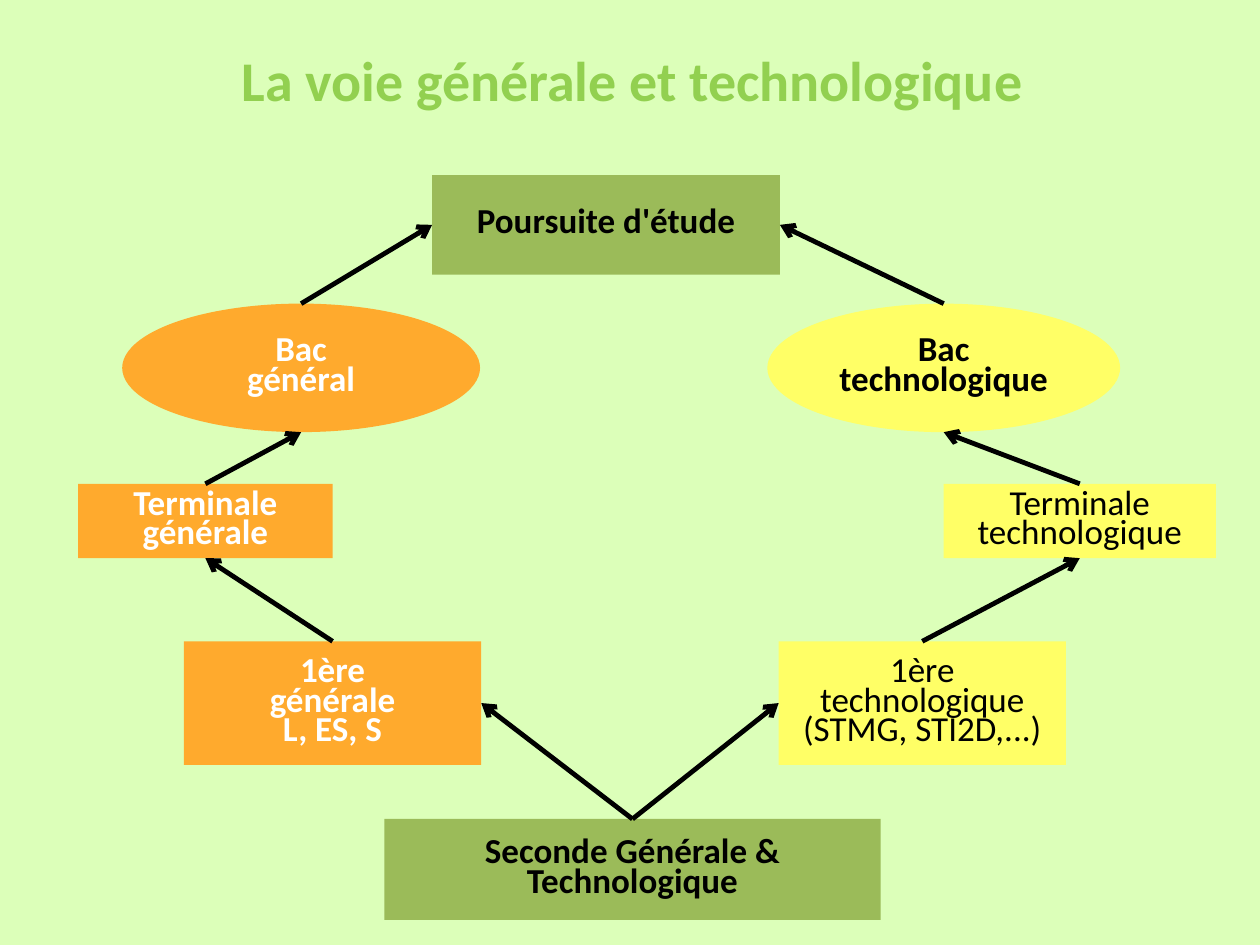
from dataclasses import dataclass

from lxml.etree import SubElement
from pptx import Presentation
from pptx.dml.color import RGBColor
from pptx.enum.shapes import MSO_CONNECTOR, MSO_SHAPE
from pptx.enum.text import MSO_ANCHOR, PP_ALIGN
from pptx.oxml.ns import qn
from pptx.slide import Slide
from pptx.util import Inches, Pt

MINT = RGBColor(0xDC, 0xFF, 0xB9)
LIME = RGBColor(0x92, 0xD0, 0x50)
OLIVE = RGBColor(0x9B, 0xBB, 0x59)
ORANGE = RGBColor(0xFF, 0xAA, 0x2D)
YELLOW = RGBColor(0xFF, 0xFF, 0x66)
BLACK = RGBColor(0, 0, 0)
WHITE = RGBColor(0xFF, 0xFF, 0xFF)
TOP, LEFT, BOTTOM, RIGHT = range(4)


@dataclass
class Diagram:
    """Draw the boxes and arrows of a study-path diagram on one page."""

    page: Slide
    font_name: str = "Calibri"
    text_size: int = 20
    title_size: int = 32
    line_spacing: float = 0.71
    arrow_width: float = 2.75

    def set_text(self, shape, lines, color, bold, size, spacing):
        frame = shape.text_frame
        frame.word_wrap = True
        frame.vertical_anchor = MSO_ANCHOR.MIDDLE
        frame.text = "\n".join(lines)
        for para in frame.paragraphs:
            para.alignment = PP_ALIGN.CENTER
            para.line_spacing = spacing
            para.font.name = self.font_name
            para.font.size = Pt(size)
            para.font.bold = bold
            para.font.color.rgb = color

    def title(self, text, left, top, width, height):
        box = self.page.shapes.add_textbox(*map(Inches, (left, top, width, height)))
        self.set_text(box, [text], LIME, True, self.title_size, 1.0)

    def node(self, preset, bounds, fill, lines, color=BLACK, bold=True):
        shape = self.page.shapes.add_shape(preset, *map(Inches, bounds))
        shape.shadow.inherit = False
        shape.fill.solid()
        shape.fill.fore_color.rgb = fill
        shape.line.fill.background()
        self.set_text(shape, lines, color, bold, self.text_size, self.line_spacing)
        return shape

    def box(self, bounds, fill, lines, color=BLACK, bold=True):
        shape = self.node(MSO_SHAPE.ROUNDED_RECTANGLE, bounds, fill, lines, color, bold)
        shape.adjustments[0] = 0
        return shape

    def oval(self, bounds, fill, lines, color=BLACK):
        return self.node(MSO_SHAPE.OVAL, bounds, fill, lines, color)

    def side_point(self, shape, side):
        across = {LEFT: 0, RIGHT: shape.width}.get(side, shape.width // 2)
        down = {TOP: 0, BOTTOM: shape.height}.get(side, shape.height // 2)
        return shape.left + across, shape.top + down

    def arrow(self, start, start_side, end, end_side):
        arrow = self.page.shapes.add_connector(
            MSO_CONNECTOR.STRAIGHT,
            *self.side_point(start, start_side),
            *self.side_point(end, end_side),
        )
        if start.auto_shape_type != MSO_SHAPE.OVAL:
            arrow.begin_connect(start, start_side)
        if end.auto_shape_type != MSO_SHAPE.OVAL:
            arrow.end_connect(end, end_side)
        arrow.line.color.rgb = BLACK
        arrow.line.width = Pt(self.arrow_width)
        SubElement(arrow.get_or_add_ln(), qn("a:tailEnd"), type="arrow")
        SubElement(arrow.element.spPr, qn("a:effectLst"))


def main():
    deck = Presentation()
    deck.slide_width, deck.slide_height = Inches(10), Inches(7.5)
    page = deck.slides.add_slide(deck.slide_layouts[6])
    page.background.fill.solid()
    page.background.fill.fore_color.rgb = MINT

    diagram = Diagram(page)
    diagram.title("La voie générale et technologique", 0.52, 0, 9, 1.25)

    seconde = diagram.box(
        (3.05, 6.5, 3.94, 0.8), OLIVE, ["Seconde Générale & Technologique"]
    )
    premiere_generale = diagram.box(
        (1.46, 5.09, 2.36, 0.98), ORANGE, ["1ère", "générale", "L, ES, S"], WHITE
    )
    premiere_techno = diagram.box(
        (6.18, 5.09, 2.28, 0.98),
        YELLOW,
        ["1ère", "technologique", "(STMG, STI2D,...)"],
        bold=False,
    )
    terminale_generale = diagram.box(
        (0.62, 3.84, 2.02, 0.59), ORANGE, ["Terminale", "générale"], WHITE
    )
    terminale_techno = diagram.box(
        (7.49, 3.84, 2.16, 0.59), YELLOW, ["Terminale", "technologique"], bold=False
    )
    bac_general = diagram.oval(
        (0.97, 2.41, 2.84, 1.02), ORANGE, ["Bac", "général"], WHITE
    )
    bac_techno = diagram.oval((6.09, 2.41, 2.8, 1.02), YELLOW, ["Bac technologique"])
    poursuite = diagram.box((3.43, 1.39, 2.76, 0.79), OLIVE, ["Poursuite d'étude"])

    tracks = [
        (premiere_generale, terminale_generale, bac_general, RIGHT, LEFT),
        (premiere_techno, terminale_techno, bac_techno, LEFT, RIGHT),
    ]
    for premiere, terminale, bac, inner_side, outer_side in tracks:
        diagram.arrow(seconde, TOP, premiere, inner_side)
        diagram.arrow(premiere, TOP, terminale, BOTTOM)
        diagram.arrow(terminale, TOP, bac, BOTTOM)
        diagram.arrow(bac, TOP, poursuite, outer_side)

    deck.save("out.pptx")


if __name__ == "__main__":
    main()
